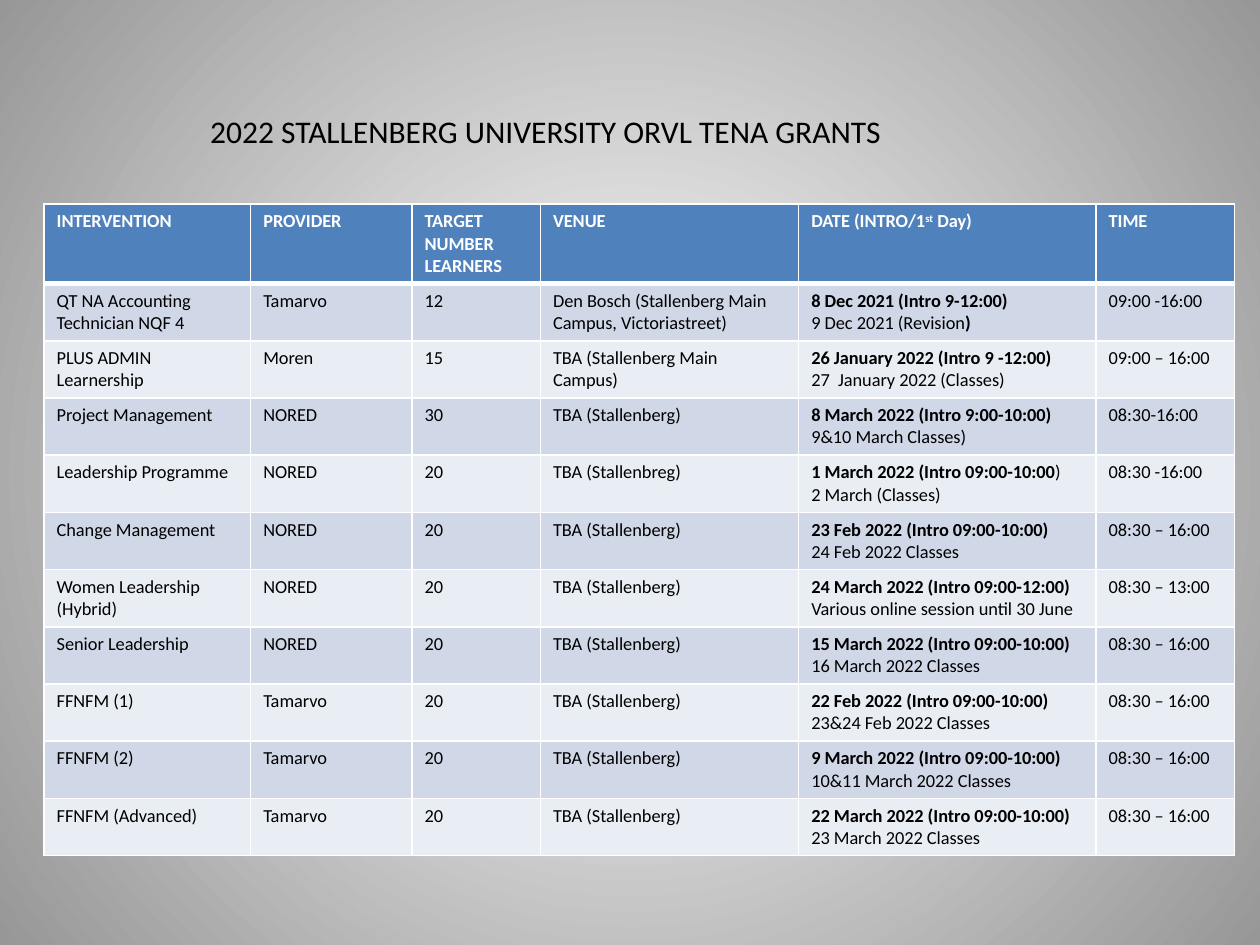
from lxml import etree
from pptx import Presentation
from pptx.dml.color import RGBColor
from pptx.oxml import ns
from pptx.util import Inches, Pt

FONT = "Calibri"
BLACK = RGBColor(0x00, 0x00, 0x00)
WHITE = RGBColor(0xFF, 0xFF, 0xFF)
GREY = RGBColor(0x97, 0x97, 0x97)
HEADER_BLUE = RGBColor(0x4F, 0x81, 0xBD)
BANDS = (RGBColor(0xD0, 0xD8, 0xE8), RGBColor(0xE9, 0xED, 0xF4))

COLUMN_WIDTHS = (1.64, 1.28, 1.02, 2.05, 2.36, 1.1)
HEADER_HEIGHT, ROW_HEIGHT = 0.62, 0.45

# Text between asterisks is superscript in the header and bold in the grants.
HEADER = ("INTERVENTION", "PROVIDER", "TARGET NUMBER LEARNERS", "VENUE",
          "DATE (INTRO/1*st* Day)", "TIME")
TOWN = "TBA (Stallenberg)"
GRANTS = (
    ("QT NA Accounting Technician NQF 4", "Tamarvo", "12",
     "Den Bosch (Stallenberg Main Campus, Victoriastreet)",
     "*8 Dec 2021 (Intro 9-12:00)*\n9 Dec 2021 (Revision*)*", "09:00 -16:00"),
    ("PLUS ADMIN Learnership", "Moren", "15", "TBA (Stallenberg Main Campus)",
     "*26 January 2022 (Intro 9 -12:00)*\n27  January 2022 (Classes)", "09:00 – 16:00"),
    ("Project Management", "NORED", "30", TOWN,
     "*8 March 2022 (Intro 9:00-10:00)*\n9&10 March Classes)", "08:30-16:00"),
    ("Leadership Programme", "NORED", "20", "TBA (Stallenbreg)",
     "*1 March 2022 (Intro 09:00-10:00*)\n2 March (Classes)", "08:30 -16:00"),
    ("Change Management", "NORED", "20", TOWN,
     "*23 Feb 2022 (Intro 09:00-10:00)*\n24 Feb 2022 Classes", "08:30 – 16:00"),
    ("Women Leadership (Hybrid)", "NORED", "20", TOWN,
     "*24 March 2022 (Intro 09:00-12:00)*\nVarious online session until 30 June",
     "08:30 – 13:00"),
    ("Senior Leadership", "NORED", "20", TOWN,
     "*15 March 2022 (Intro 09:00-10:00)*\n16 March 2022 Classes", "08:30 – 16:00"),
    ("FFNFM (1)", "Tamarvo", "20", TOWN,
     "*22 Feb 2022 (Intro 09:00-10:00)*\n23&24 Feb 2022 Classes", "08:30 – 16:00"),
    ("FFNFM (2)", "Tamarvo", "20", TOWN,
     "*9 March 2022 (Intro 09:00-10:00)*\n10&11 March 2022 Classes", "08:30 – 16:00"),
    ("FFNFM (Advanced)", "Tamarvo", "20", TOWN,
     "*22 March 2022 (Intro 09:00-10:00)*\n23 March 2022 Classes", "08:30 – 16:00"),
)


def write_text(frame, content, size, color=BLACK, bold=False, superscript=False):
    """Fill a frame; marked spans turn superscript if asked, otherwise bold."""
    frame.word_wrap = True
    for index, line in enumerate(content.split("\n")):
        para = frame.paragraphs[0] if index == 0 else frame.add_paragraph()
        for position, piece in enumerate(line.split("*")):
            if not piece:
                continue
            marked = position % 2 == 1
            span = para.add_run()
            span.text = piece
            span.font.name = FONT
            span.font.size = Pt(size)
            span.font.color.rgb = color
            span.font.bold = bold or (marked and not superscript)
            if marked and superscript:
                span.font._element.set("baseline", "30000")


def set_radial_background(page, inner, outer):
    fill = page.background.fill
    fill.gradient()
    for stop, color, position in zip(fill.gradient_stops, (inner, outer), (0, 1)):
        stop.color.rgb = color
        stop.position = position
    linear = next(page._element.iter(ns.qn("a:lin")))
    gradient = linear.getparent()
    circle = etree.Element(ns.qn("a:path"), {"path": "circle"})
    etree.SubElement(circle, ns.qn("a:fillToRect"), dict.fromkeys("ltrb", "50000"))
    gradient.replace(linear, circle)


def set_borders(cell, top=1, bottom=1):
    properties = cell._tc.get_or_add_tcPr()
    widths = {"a:lnL": 1, "a:lnR": 1, "a:lnT": top, "a:lnB": bottom}
    for index, (tag, width) in enumerate(widths.items()):
        line = etree.Element(ns.qn(tag), {"w": str(Pt(width))})
        solid = etree.SubElement(line, ns.qn("a:solidFill"))
        etree.SubElement(solid, ns.qn("a:srgbClr"), {"val": str(WHITE)})
        properties.insert(index, line)


def add_grants_table(page):
    heights = [HEADER_HEIGHT] + [ROW_HEIGHT] * len(GRANTS)
    table = page.shapes.add_table(
        len(heights), len(COLUMN_WIDTHS), Inches(0.35), Inches(1.62),
        Inches(sum(COLUMN_WIDTHS)), Inches(sum(heights))).table
    for column, width in zip(table.columns, COLUMN_WIDTHS):
        column.width = Inches(width)
    for index, (row, height, values) in enumerate(
            zip(table.rows, heights, (HEADER, *GRANTS))):
        row.height = Inches(height)
        is_header = index == 0
        for cell, value in zip(row.cells, values):
            cell.fill.solid()
            cell.fill.fore_color.rgb = HEADER_BLUE if is_header else BANDS[(index - 1) % 2]
            # The thick rule is shared by the header and the first grant.
            set_borders(cell, top=3 if index == 1 else 1, bottom=3 if is_header else 1)
            write_text(cell.text_frame, value, 10.5, color=WHITE if is_header else BLACK,
                       bold=is_header, superscript=is_header)


def add_title(page):
    box = page.shapes.add_textbox(Inches(1.57), Inches(0.84), Inches(7.01), Inches(0.4))
    write_text(box.text_frame, "2022 STALLENBERG UNIVERSITY ORVL TENA GRANTS", 18)


def main():
    deck = Presentation()
    deck.slide_width, deck.slide_height = Inches(10), Inches(7.5)
    page = deck.slides.add_slide(deck.slide_layouts[6])
    set_radial_background(page, WHITE, GREY)
    add_grants_table(page)
    add_title(page)
    deck.save("out.pptx")


if __name__ == "__main__":
    main()
